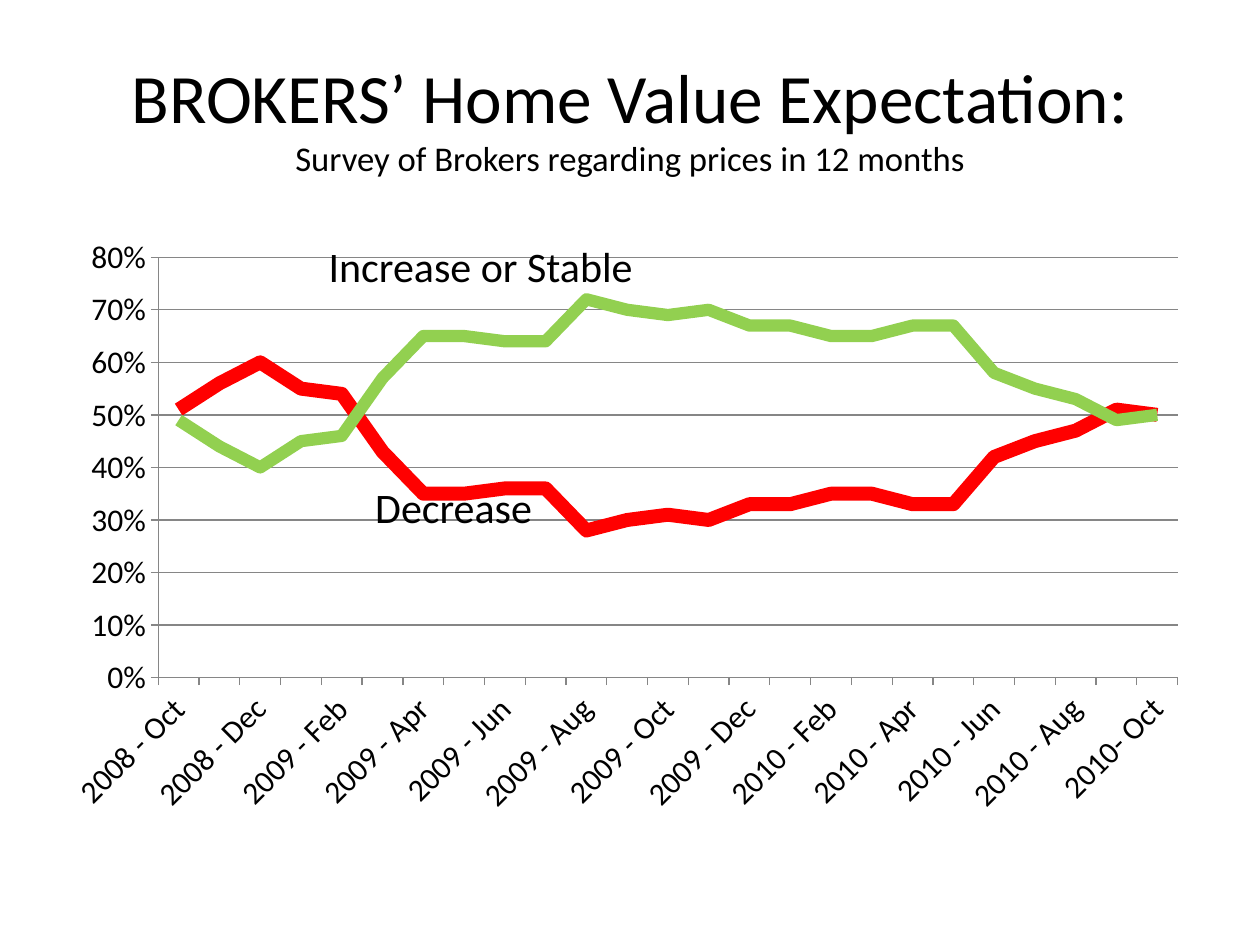
import pptx
import pptx.util
import pptx.dml.color
import pptx.chart.data
import pptx.enum.chart
import pptx.enum.text
import pptx.oxml
import pptx.oxml.ns

Inches = pptx.util.Inches
Pt = pptx.util.Pt
ticks = pptx.enum.chart.XL_TICK_MARK
align = pptx.enum.text.PP_ALIGN
qn = pptx.oxml.ns.qn


def color(code):
    return pptx.dml.color.RGBColor.from_string(code)


def add_run(par, text, size):
    run = par.add_run()
    run.text = text
    run.font.size = Pt(size)
    run.font.name = "Calibri"
    run.font.color.rgb = color("000000")


deck = pptx.Presentation()
deck.slide_width, deck.slide_height = Inches(10), Inches(7.5)
slide = deck.slides.add_slide(deck.slide_layouts[5])

# Title with a smaller second line
title = slide.shapes.title
title.left, title.top = Inches(0.5), Inches(0.3)
title.width, title.height = Inches(9), Inches(1.25)
frame = title.text_frame
frame.word_wrap = True
frame.auto_size = pptx.enum.text.MSO_AUTO_SIZE.NONE
frame.vertical_anchor = pptx.enum.text.MSO_ANCHOR.MIDDLE
par = frame.paragraphs[0]
par.alignment = align.CENTER
add_run(par, "BROKERS’ Home Value Expectation:", 39.6)
par.add_line_break()
add_run(par, "Survey of Brokers regarding prices in 12 months", 19.8)

# Chart data: monthly from October 2008 to October 2010
months = "Jan Feb Mar Apr May Jun Jul Aug Sep Oct Nov Dec".split()
dates = [f"{2008 + n // 12} - {months[n % 12]}" for n in range(9, 33)]
lines = [
    ("Series 1", "FF0000", 8,
     [0.51, 0.56, 0.6, 0.55, 0.54, 0.43, 0.35, 0.35, 0.36, 0.36, 0.28, 0.3, 0.31,
      0.3, 0.33, 0.33, 0.35, 0.35, 0.33, 0.33, 0.42, 0.45, 0.47, 0.51, 0.5]),
    ("Series 2", "92D050", 7,
     [0.49, 0.44, 0.4, 0.45, 0.46, 0.57, 0.65, 0.65, 0.64, 0.64, 0.72, 0.7, 0.69,
      0.7, 0.67, 0.67, 0.65, 0.65, 0.67, 0.67, 0.58, 0.55, 0.53, 0.49, 0.5]),
]
data = pptx.chart.data.CategoryChartData(number_format="0%")
data.categories = dates + ["2010- Oct"]
for name, _, _, vals in lines:
    data.add_series(name, vals)

# Line chart
chart = slide.shapes.add_chart(
    pptx.enum.chart.XL_CHART_TYPE.LINE,
    Inches(0.5), Inches(1.75), Inches(9), Inches(4.95), data).chart
chart.has_title = False
chart.has_legend = False
chart.font.name = "Calibri"
chart.font.size = Pt(18)
chart.font.color.rgb = color("000000")
plot = chart.plots[0]
plot.vary_by_categories = False
for series, (_, code, width, _) in zip(plot.series, lines):
    series.smooth = False
    series.marker.style = pptx.enum.chart.XL_MARKER_STYLE.NONE
    series.format.line.color.rgb = color(code)
    series.format.line.width = Pt(width)

# Axes and grid
scale = chart.value_axis
scale.minimum_scale, scale.maximum_scale, scale.major_unit = 0, 0.8, 0.1
scale.has_major_gridlines = True
scale.tick_labels.number_format = "0%"
scale.tick_labels.number_format_is_linked = False
for axis in (scale, chart.category_axis):
    axis.major_tick_mark = ticks.OUTSIDE
    axis.minor_tick_mark = ticks.NONE
for part in (scale, chart.category_axis, scale.major_gridlines):
    part.format.line.color.rgb = color("868686")
    part.format.line.width = Pt(0.75)

# Fixed inner plot area
area = chart.element.find(".//" + qn("c:plotArea"))
for old in area.findall(qn("c:layout")):
    area.remove(old)
spots = "".join(f'<c:{key} val="{val}"/>' for key, val in [
    ("layoutTarget", "inner"), ("xMode", "edge"), ("yMode", "edge"),
    ("x", 0.084), ("y", 0.059), ("w", 0.899), ("h", 0.674)])
area.insert(0, pptx.oxml.parse_xml(
    f'<c:layout {pptx.oxml.ns.nsdecls("c")}>'
    f"<c:manualLayout>{spots}</c:manualLayout></c:layout>"))

# Line labels
for text, left, top, width in [("Increase or Stable", 2.51, 1.86, 2.64),
                               ("Decrease", 2.88, 3.77, 1.46)]:
    box = slide.shapes.add_textbox(Inches(left), Inches(top), Inches(width), Inches(0.5))
    box.text_frame.word_wrap = False
    box.text_frame.auto_size = pptx.enum.text.MSO_AUTO_SIZE.SHAPE_TO_FIT_TEXT
    add_run(box.text_frame.paragraphs[0], text, 24)

deck.save("out.pptx")
